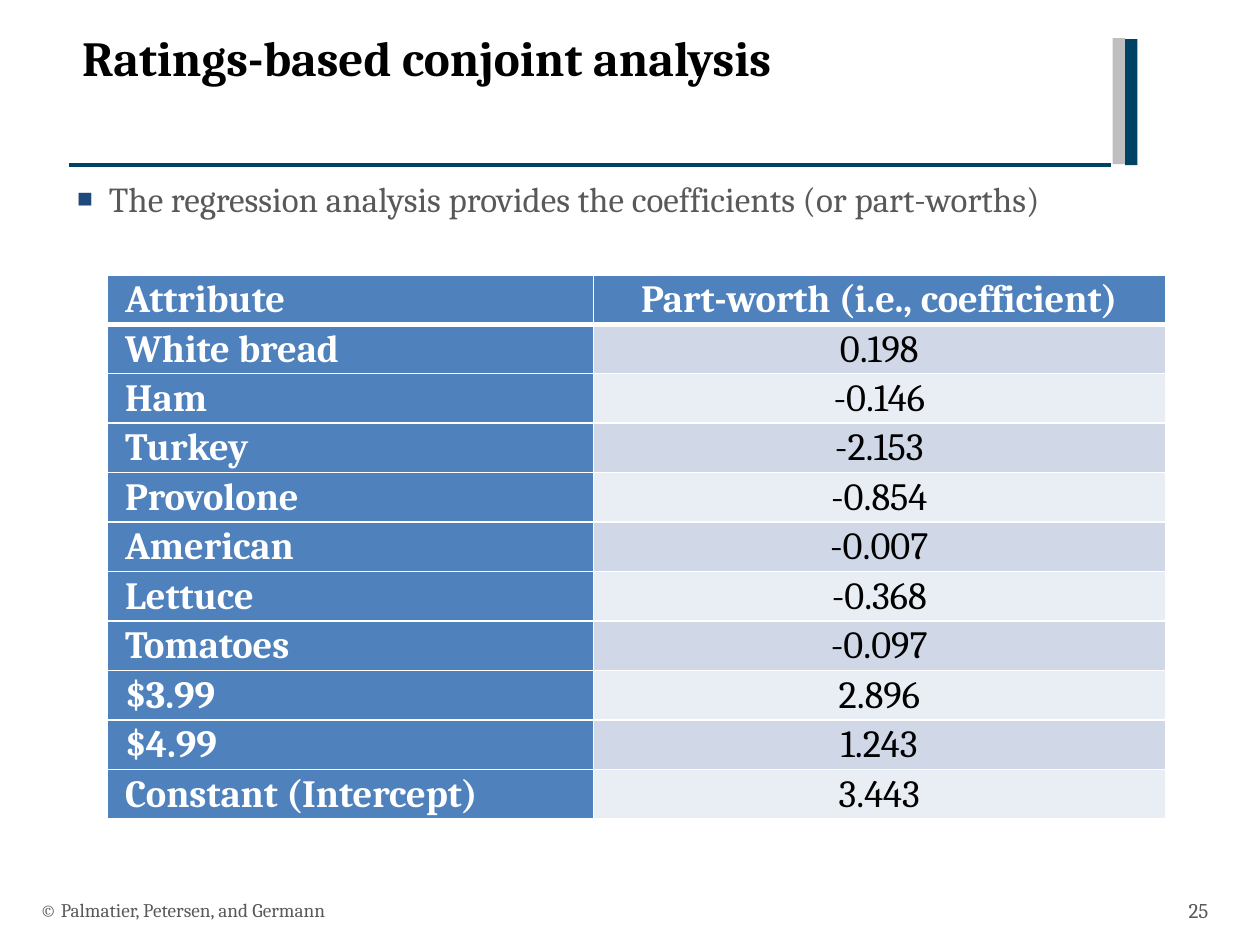
from dataclasses import dataclass

import pptx
import pptx.dml.color
import pptx.enum.shapes
import pptx.enum.text
import pptx.oxml
import pptx.oxml.ns
import pptx.util
from pptx.util import Cm, Pt

Align = pptx.enum.text.PP_ALIGN
Anchor = pptx.enum.text.MSO_ANCHOR

FONT = "Cambria"
NAVY, SILVER, GREY = "004264", "BFBFBF", "595959"
BLACK, WHITE = "000000", "FFFFFF"
HEADER_BLUE, BANDS = "4F81BD", ("D0D8E8", "E9EDF4")
DRAWING_NS = pptx.oxml.ns.nsdecls("a")


@dataclass(frozen=True)
class Box:
    """A frame on the slide, in centimetres."""
    left: float
    top: float
    width: float
    height: float

    def lengths(self) -> tuple:
        return Cm(self.left), Cm(self.top), Cm(self.width), Cm(self.height)


@dataclass(frozen=True)
class TextStyle:
    size: float
    color: str
    bold: bool = False
    align: Align = Align.LEFT


@dataclass(frozen=True)
class Bar:
    box: Box
    color: str


@dataclass(frozen=True)
class FooterText:
    text: str
    box: Box
    style: TextStyle


BARS = (
    Bar(Box(22.68, 0.79, 0.25, 2.54), NAVY),
    Bar(Box(22.43, 0.77, 0.25, 2.54), SILVER),
)
FOOTERS = (
    FooterText("© Palmatier, Petersen, and Germann", Box(0.56, 17.83, 17, 1.02),
               TextStyle(11, GREY)),
    FooterText("25", Box(23.06, 17.83, 1.55, 1.02),
               TextStyle(12, GREY, align=Align.RIGHT)),
)
TABLE_BOX = Box(2.16, 5.54, 21.33, 10.65)
COLUMN_WIDTHS = (9.8, 11.53)
PART_WORTHS = (
    ("Attribute", "Part-worth (i.e., coefficient)"),
    ("White bread", "0.198"),
    ("Ham", "-0.146"),
    ("Turkey", "-2.153"),
    ("Provolone", "-0.854"),
    ("American", "-0.007"),
    ("Lettuce", "-0.368"),
    ("Tomatoes", "-0.097"),
    ("$3.99", "2.896"),
    ("$4.99", "1.243"),
    ("Constant (Intercept)", "3.443"),
)


def rgb(color: str) -> pptx.dml.color.RGBColor:
    return pptx.dml.color.RGBColor.from_string(color)


def style_paragraph(paragraph, style: TextStyle) -> None:
    paragraph.alignment = style.align
    font = paragraph.font
    font.name, font.size, font.bold = FONT, Pt(style.size), style.bold
    font.color.rgb = rgb(style.color)


def place(shape, box: Box) -> None:
    shape.left, shape.top, shape.width, shape.height = box.lengths()


def add_bar(slide, bar: Bar) -> None:
    shape = slide.shapes.add_shape(
        pptx.enum.shapes.MSO_SHAPE.RECTANGLE, *bar.box.lengths())
    shape.shadow.inherit = False
    shape.fill.solid()
    shape.fill.fore_color.rgb = rgb(bar.color)
    shape.line.fill.background()


def add_title_rule(slide) -> None:
    rule = slide.shapes.add_connector(
        pptx.enum.shapes.MSO_CONNECTOR.STRAIGHT,
        Cm(1.4), Cm(3.33), Cm(22.4), Cm(3.33))
    rule.line.color.rgb = rgb(NAVY)
    rule.line.width = Pt(2)
    properties = rule._element.spPr
    properties.append(pptx.oxml.parse_xml(f"<a:effectLst {DRAWING_NS}/>"))


def fill_title(slide) -> None:
    title = slide.shapes.title
    place(title, Box(1.4, 0.43, 20.98, 2.59))
    title.text_frame.text = "Ratings-based conjoint analysis"
    title.text_frame.vertical_anchor = Anchor.TOP
    style_paragraph(title.text_frame.paragraphs[0], TextStyle(28, BLACK, bold=True))


def fill_body(slide) -> None:
    body = slide.placeholders[1]
    place(body, Box(1.3, 3.45, 23.22, 13.54))
    body.text_frame.text = (
        "The regression analysis provides the coefficients (or part-worths)")
    paragraph = body.text_frame.paragraphs[0]
    paragraph.space_before = Pt(0)
    add_square_bullet(paragraph)
    style_paragraph(paragraph, TextStyle(20, GREY))


def add_square_bullet(paragraph) -> None:
    properties = paragraph._p.get_or_add_pPr()
    indent = Cm(0.64)
    properties.set("marL", str(indent))
    properties.set("indent", str(-indent))
    for element in (
        f'<a:buClr {DRAWING_NS}><a:srgbClr val="1F497D"/></a:buClr>',
        f'<a:buSzPct {DRAWING_NS} val="75000"/>',
        f'<a:buChar {DRAWING_NS} char="■"/>',
    ):
        properties.append(pptx.oxml.parse_xml(element))


def add_footer(slide, footer: FooterText) -> None:
    frame = slide.shapes.add_textbox(*footer.box.lengths()).text_frame
    frame.word_wrap = True
    frame.vertical_anchor = Anchor.MIDDLE
    frame.text = footer.text
    style_paragraph(frame.paragraphs[0], footer.style)


def set_borders(cell, top: float, bottom: float) -> None:
    """Draw white cell borders, with widths in points."""
    properties = cell._tc.get_or_add_tcPr()
    for side, width in (("L", 1), ("R", 1), ("T", top), ("B", bottom)):
        properties.append(pptx.oxml.parse_xml(
            f'<a:ln{side} {DRAWING_NS} w="{Pt(width)}"><a:solidFill>'
            f'<a:srgbClr val="{WHITE}"/></a:solidFill></a:ln{side}>'))


def fill_cell(cell, text: str, row: int, column: int) -> None:
    is_heading = row == 0 or column == 0
    set_borders(cell, top=3 if row == 1 else 1, bottom=3 if row == 0 else 1)
    cell.fill.solid()
    cell.fill.fore_color.rgb = rgb(HEADER_BLUE if is_heading else BANDS[(row - 1) % 2])
    cell.margin_left = cell.margin_right = Cm(0.36)
    cell.margin_top = cell.margin_bottom = 0
    cell.text = text
    paragraph = cell.text_frame.paragraphs[0]
    paragraph.line_spacing = 1.07
    style_paragraph(paragraph, TextStyle(
        22, WHITE if is_heading else BLACK, is_heading,
        Align.CENTER if column else Align.LEFT))


def add_part_worth_table(slide) -> None:
    table = slide.shapes.add_table(
        len(PART_WORTHS), len(COLUMN_WIDTHS), *TABLE_BOX.lengths()).table
    for column, width in zip(table.columns, COLUMN_WIDTHS):
        column.width = Cm(width)
    for row, texts in enumerate(PART_WORTHS):
        for column, text in enumerate(texts):
            fill_cell(table.cell(row, column), text, row, column)


def main() -> None:
    presentation = pptx.Presentation()
    presentation.slide_width, presentation.slide_height = Cm(25.4), Cm(19.05)
    slide = presentation.slides.add_slide(presentation.slide_layouts[1])
    add_title_rule(slide)
    for bar in BARS:
        add_bar(slide, bar)
    fill_title(slide)
    fill_body(slide)
    for footer in FOOTERS:
        add_footer(slide, footer)
    add_part_worth_table(slide)
    presentation.save("out.pptx")


if __name__ == "__main__":
    main()
